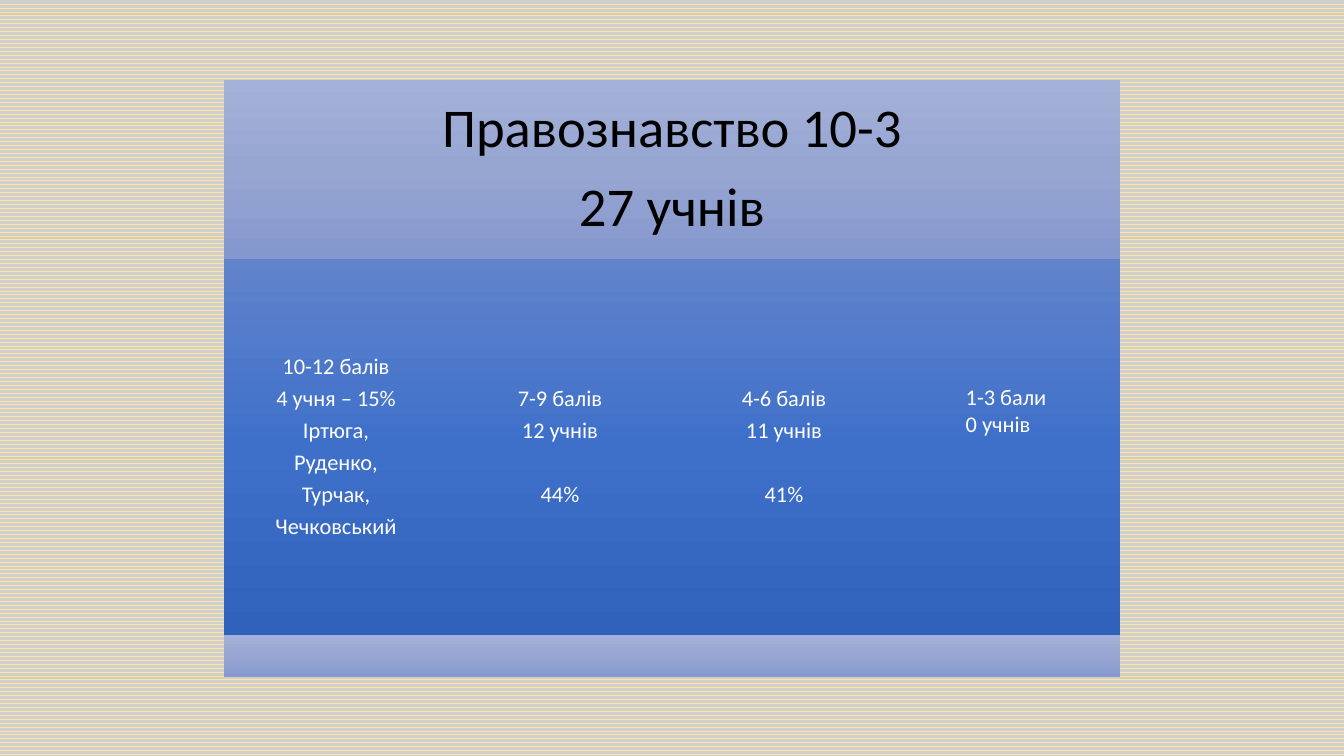
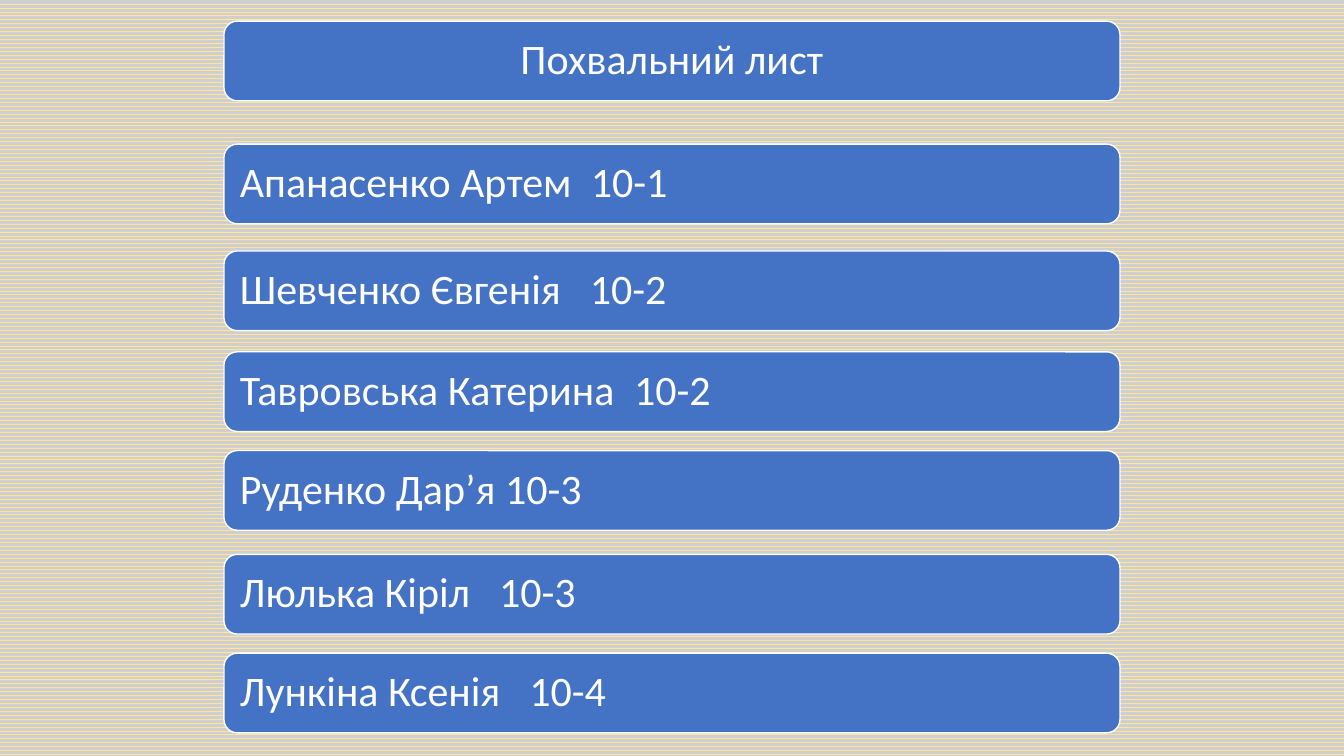
from copy import deepcopy

from lxml import etree
from pptx import Presentation
from pptx import util as u
from pptx.dml.color import RGBColor
from pptx.enum import dml, shapes, text
from pptx.oxml.ns import qn

WIDTH, HEIGHT = 13.33, 7.5
LEFT, PANEL = WIDTH / 6, WIDTH * 2 / 3
FONT = "Calibri"
WHITE, BLACK, BLUE = "FFFFFF", "000000", "4472C4"
PALE_FADE = ("A4B2D9", "97A6D1", "8497CE")
BLUE_FADE = ("6183CB", "3E70CA", "3062BB")
CENTER, START = text.PP_ALIGN.CENTER, text.PP_ALIGN.LEFT

TABLE_TOP, TABLE_HEIGHT = 0.79, 5.93
HEADER_SHARE, BODY_SHARE, FOOTER_SHARE = 0.3, 0.63, 0.07
HEADING = ["Правознавство 10-3", "27 учнів"]
GRADES = [
    ["10-12 балів", "4 учня – 15%", "Іртюга,", "Руденко,", "Турчак,", "Чечковський"],
    ["7-9 балів", "12 учнів", "44%"],
    ["4-6 балів", "11 учнів", "41%"],
    [],
]
LOWEST_GRADE = ["1-3 бали", "0 учнів"]
BLANK_LINE = 23

CARD_HEIGHT = 0.79
AWARD_TITLE, AWARD_TOP = "Похвальний лист", 0.21
AWARDS = [
    ("Апанасенко Артем", "10-1", 1.43, 3.48),
    ("Шевченко Євгенія", "10-2", 2.49, 3.47),
    ("Тавровська Катерина", "10-2", 3.49, 3.91),
    ("Руденко Дар’я", "10-3", 4.47, 2.63),
    ("Люлька Кіріл", "10-3", 5.5, 2.57),
    ("Лункіна Ксенія", "10-4", 6.48, 2.87),
]


def color(value):
    return RGBColor.from_string(value)


def apply(target, formats):
    for name, value in formats.items():
        setattr(target, name, value)


def inches(*lengths):
    return [u.Inches(length) for length in lengths]


def add_page(deck):
    page = deck.slides.add_slide(deck.slide_layouts[6])
    fill = page.background.fill
    fill.patterned()
    fill.pattern = dml.MSO_PATTERN.WAVE
    fill.fore_color.rgb = color("FFE699")
    fill.back_color.rgb = color("D0CECE")
    return page


def write(shape, lines, size, ink=WHITE, align=CENTER, inset=0.07, spaced=True):
    sides = ("left", "top", "right", "bottom")
    frame = shape.text_frame
    apply(frame, {f"margin_{side}": u.Inches(inset) for side in sides})
    apply(frame, {"word_wrap": True, "vertical_anchor": text.MSO_ANCHOR.MIDDLE})
    for index, line in enumerate(lines):
        para = frame.paragraphs[0] if index == 0 else frame.add_paragraph()
        para.alignment = align
        if spaced:
            apply(para, {"line_spacing": 0.9, "space_after": u.Pt(size * 0.35)})
        span = para.add_run()
        span.text = line
        apply(span.font, {"name": FONT, "size": u.Pt(size)})
        span.font.color.rgb = color(ink)
    return frame


def add_fade(page, box, fade):
    shape = page.shapes.add_shape(shapes.MSO_SHAPE.RECTANGLE, *inches(*box))
    shape.shadow.inherit = False
    shape.line.fill.background()
    shape.fill.gradient()
    shape.fill.gradient_angle = 270
    stops = shape._element.spPr.find(".//" + qn("a:gsLst"))
    stops.insert(1, deepcopy(stops[0]))
    for index, stop in enumerate(shape.fill.gradient_stops):
        stop.color.rgb = color(fade[index])
        stop.position = index / 2
    return shape


def add_card(page, top, line, align):
    box = inches(LEFT, top, PANEL, CARD_HEIGHT)
    card = page.shapes.add_shape(shapes.MSO_SHAPE.ROUNDED_RECTANGLE, *box)
    card.shadow.inherit = False
    card.fill.solid()
    card.fill.fore_color.rgb = color(BLUE)
    card.line.color.rgb = color(WHITE)
    card.line.width = u.Pt(1)
    return write(card, [line], 30, align=align, inset=0.12)


def add_tab_stop(para, position):
    tabs = etree.SubElement(para._p.get_or_add_pPr(), qn("a:tabLst"))
    etree.SubElement(tabs, qn("a:tab"), pos=str(u.Inches(position)), algn="l")


def build_grades(deck):
    page = add_page(deck)
    header, body, footer = (
        TABLE_HEIGHT * share for share in (HEADER_SHARE, BODY_SHARE, FOOTER_SHARE)
    )
    body_top = TABLE_TOP + header
    banner = add_fade(page, (LEFT, TABLE_TOP, PANEL, header), PALE_FADE)
    write(banner, HEADING, 39, BLACK, inset=0.16)
    column = PANEL / len(GRADES)
    for index, lines in enumerate(GRADES):
        cell = add_fade(page, (LEFT + index * column, body_top, column, body), BLUE_FADE)
        frame = write(cell, lines, 16)
        if len(lines) == 3:
            frame.paragraphs[-1].space_before = u.Pt(BLANK_LINE)
    add_fade(page, (LEFT, body_top + body, PANEL, footer), PALE_FADE)
    label = page.shapes.add_textbox(*inches(9.48, 3.75, 1.01, 0.64))
    write(label, LOWEST_GRADE, 16, align=START, inset=0.1, spaced=False)
    label.text_frame.word_wrap = False


def build_awards(deck):
    page = add_page(deck)
    add_card(page, AWARD_TOP, AWARD_TITLE, CENTER)
    for name, group, top, tab in AWARDS:
        frame = add_card(page, top, f"{name}\t{group}", START)
        add_tab_stop(frame.paragraphs[0], tab)


def main():
    deck = Presentation()
    apply(deck, {"slide_width": u.Inches(WIDTH), "slide_height": u.Inches(HEIGHT)})
    build_grades(deck)
    build_awards(deck)
    deck.save("out.pptx")


if __name__ == "__main__":
    main()
